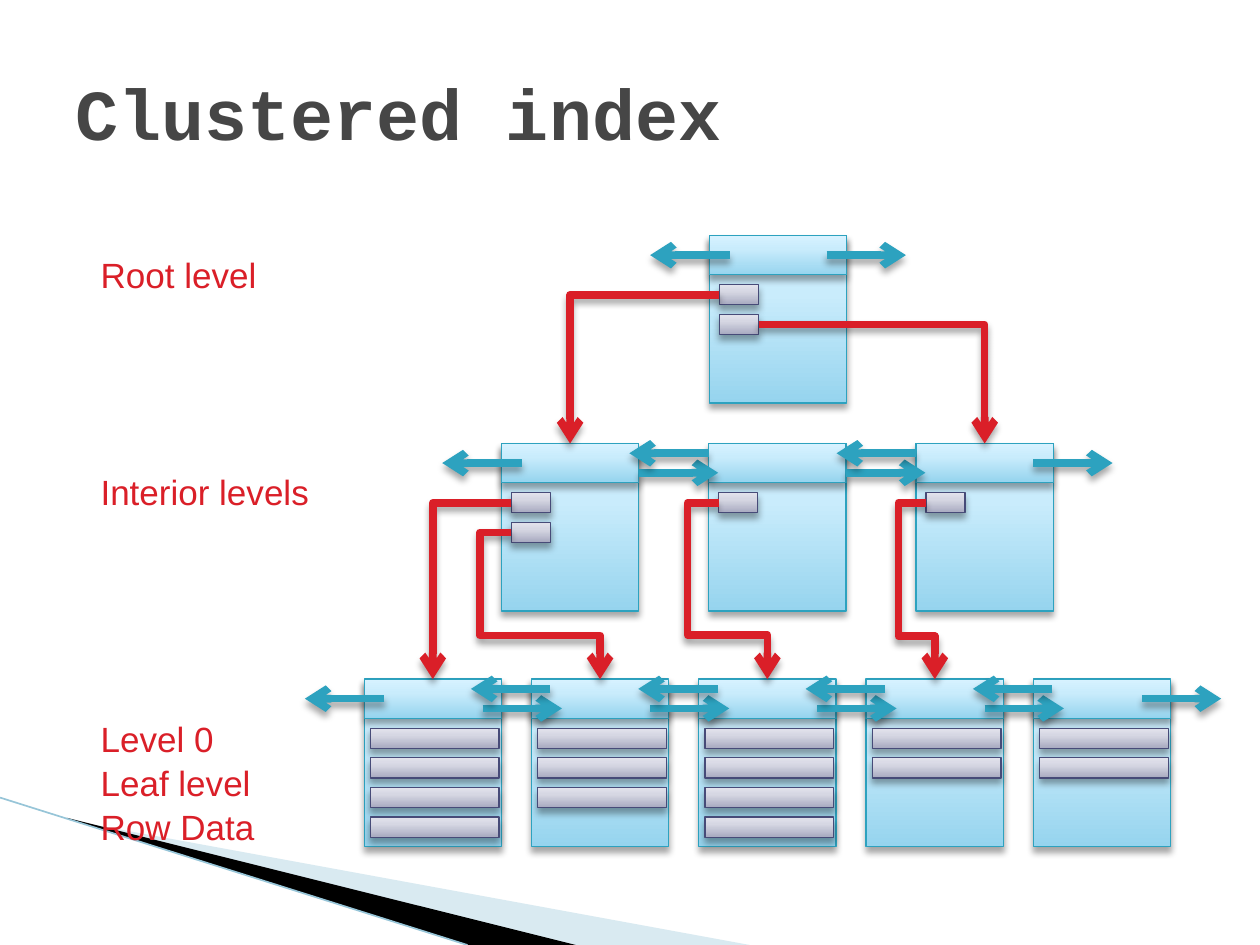
from copy import deepcopy

from lxml.etree import SubElement
from pptx import Presentation
from pptx.dml.color import RGBColor
from pptx.enum.shapes import MSO_CONNECTOR as CONN, MSO_SHAPE as SHAPE
from pptx.enum.text import MSO_ANCHOR, MSO_AUTO_SIZE, PP_ALIGN
from pptx.oxml.ns import qn
from pptx.util import Inches, Pt

RED = RGBColor(0xDA, 0x1F, 0x28)
TEAL = RGBColor(0x2D, 0xA2, 0xBF)
NAVY = RGBColor(0x47, 0x4B, 0x78)
GREY = RGBColor(0x46, 0x46, 0x46)
BLACK = RGBColor(0, 0, 0)
PALE = RGBColor(0xA0, 0xCB, 0xDC)
PALE_LINE = RGBColor(0x97, 0xC5, 0xD8)
PAGE_STOPS = [(0, RGBColor(0x96, 0xD4, 0xEE)), (0.65, RGBColor(0xC9, 0xEC, 0xFC)),
              (1, RGBColor(0xD7, 0xF2, 0xFF))]
SLOT_STOPS = [(0, RGBColor(0xA8, 0xAA, 0xC0)), (0.65, RGBColor(0xD6, 0xD7, 0xE3)),
              (1, RGBColor(0xE2, 0xE2, 0xEC))]

# Content: each level has one slot count per page
TITLE = "Clustered index"
LABELS = [(["Level 0", "Leaf level", "Row Data"], 5.63, 1.51, 1.11),
          (["Interior levels"], 3.67, 1.87, 0.44),
          (["Root level"], 1.95, 1.45, 0.44)]
LEVELS = {
    "leaf": dict(x=2.89, y=5.39, pitch=1.328, slots=[4, 3, 4, 2, 2],
                 slot_w=1.02, slot_dx=0.05, overlap=0.15, last_inset=0.23),
    "interior": dict(x=3.98, y=3.52, pitch=1.645, slots=[2, 1, 1],
                     slot_w=0.31, slot_dx=0.08, overlap=0, last_inset=0.16),
    "root": dict(x=5.63, y=1.87, pitch=0, slots=[2],
                 slot_w=0.31, slot_dx=0.08, overlap=0, last_inset=0.16),
}
# Pointers: (level, page, slot), side of the slot, (level, page), bend adjustments
LEFT, RIGHT, TOP = 1, 3, 0
POINTERS = [
    (("interior", 0, 0), LEFT, ("leaf", 0), None),
    (("interior", 0, 1), LEFT, ("leaf", 1), (-0.356, 0.702)),
    (("interior", 1, 0), LEFT, ("leaf", 2), (-0.64, 0.75)),
    (("interior", 2, 0), LEFT, ("leaf", 3), (-3.2, 0.757)),
    (("root", 0, 0), LEFT, ("interior", 0), None),
    (("root", 0, 1), RIGHT, ("interior", 2), None),
]
SWOOSHES = [
    ([(0.55, 6.51), (5.95, 7.5), (4.56, 7.5), (0.55, 6.5)], PALE, 40),
    ([(0.53, 6.49), (4.57, 7.5), (3.72, 7.5), (0.54, 6.5)], BLACK, 100),
]
PAGE_W, PAGE_H, HEAD_H = 1.09, 1.33, 0.31
SLOT_H, SLOT_DY, SLOT_PITCH = 0.16, 0.39, 0.235
ARROW_LEN, ARROW_INSET = 0.63, 0.16
ARROW_PT = 4.33

prs = Presentation()
prs.slide_width, prs.slide_height = Inches(10), Inches(7.5)
slide = prs.slides.add_slide(prs.slide_layouts[5])
shapes = slide.shapes


def set_text(s, lines, size, color, font="Arial", bold=False, spacing=None,
             anchor=MSO_ANCHOR.TOP, wrap=True, fit=MSO_AUTO_SIZE.NONE):
    tf = s.text_frame
    tf.word_wrap, tf.auto_size, tf.vertical_anchor = wrap, fit, anchor
    for i, line in enumerate(lines):
        p = tf.add_paragraph() if i else tf.paragraphs[0]
        p.alignment, p.line_spacing = PP_ALIGN.LEFT, spacing
        r = p.add_run()
        r.text = line
        r.font.name, r.font.size, r.font.bold = font, Pt(size), bold
        r.font.color.rgb = color


def add_shadow(s):
    effects = SubElement(s._element.spPr, qn("a:effectLst"))
    shadow = SubElement(effects, qn("a:outerShdw"), blurRad=str(Pt(4)), dist=str(Pt(3)),
                        dir="5400000", algn="ctr", rotWithShape="0")
    black = SubElement(shadow, qn("a:srgbClr"), val="000000")
    SubElement(black, qn("a:alpha"), val="35000")


def add_box(x, y, w, h, stops, line):
    s = shapes.add_shape(SHAPE.RECTANGLE, *map(Inches, (x, y, w, h)))
    s.fill.gradient()
    s.fill.gradient_angle = 90
    gs_list = s._element.spPr.find(".//" + qn("a:gsLst"))
    gs_list.append(deepcopy(gs_list[0]))
    for stop, (position, color) in zip(s.fill.gradient_stops, stops):
        stop.position, stop.color.rgb = position, color
    s.line.color.rgb, s.line.width = line, Pt(0.75)
    add_shadow(s)
    return s


def style_arrow(c, color):
    c.line.color.rgb, c.line.width = color, Pt(ARROW_PT)
    SubElement(c.line._get_or_add_ln(), qn("a:tailEnd"), type="arrow")
    add_shadow(c)


def add_arrow(x, y, length):
    c = shapes.add_connector(CONN.STRAIGHT, *map(Inches, (x, y, x + length, y)))
    style_arrow(c, TEAL)


def add_pointer(slot, side, head, bends):
    c = shapes.add_connector(CONN.ELBOW, 0, 0, 0, 0)
    c.begin_connect(slot, side)
    c.end_connect(head, TOP)
    geom = c._element.spPr.find(qn("a:prstGeom"))
    geom.set("prst", "bentConnector4" if bends else "bentConnector2")
    for i, bend in enumerate(bends or (), 1):
        SubElement(geom.find(qn("a:avLst")), qn("a:gd"), name=f"adj{i}",
                   fmla=f"val {round(bend * 100000)}")
    style_arrow(c, RED)


# Corner decoration
for points, color, alpha in SWOOSHES:
    corners = [(Inches(x), Inches(y)) for x, y in points]
    builder = shapes.build_freeform(*corners[0])
    builder.add_line_segments(corners[1:])
    s = builder.convert_to_shape()
    s.shadow.inherit = False
    s.fill.solid()
    s.fill.fore_color.rgb = color
    s.line.fill.background()
    if alpha < 100:
        rgb = s._element.spPr.find(qn("a:solidFill"))[0]
        SubElement(rgb, qn("a:alpha"), val=str(alpha * 1000))
edge = shapes.add_connector(CONN.STRAIGHT, *map(Inches, (0, 6.33, 3.71, 7.5)))
edge.line.color.rgb, edge.line.width = PALE_LINE, Pt(0.95)
SubElement(edge._element.spPr, qn("a:effectLst"))

# Title and level labels
title = shapes.title
title.left, title.top, title.width, title.height = map(Inches, (0.5, 0.39, 9, 1))
set_text(title, [TITLE], 41, GREY, font="Courier New", bold=True, anchor=MSO_ANCHOR.MIDDLE)
for lines, y, w, h in LABELS:
    label = shapes.add_textbox(*map(Inches, (0.7, y, w, h)))
    set_text(label, lines, 20, RED, spacing=1.05, wrap=False, fit=MSO_AUTO_SIZE.SHAPE_TO_FIT_TEXT)

# Pages with their headers
heads, slots = {}, {}
for name, lv in LEVELS.items():
    lv["xs"] = [lv["x"] + i * lv["pitch"] for i in range(len(lv["slots"]))]
    for i, x in enumerate(lv["xs"]):
        add_box(x, lv["y"], PAGE_W, PAGE_H, PAGE_STOPS, TEAL)
        heads[name, i] = add_box(x, lv["y"], PAGE_W, HEAD_H, PAGE_STOPS, TEAL)

# Arrows to neighbouring pages
for lv in LEVELS.values():
    xs, y, overlap = lv["xs"], lv["y"], lv["overlap"]
    add_arrow(xs[0] + ARROW_INSET, y + HEAD_H / 2, -ARROW_LEN)
    add_arrow(xs[-1] + PAGE_W - lv["last_inset"], y + HEAD_H / 2, ARROW_LEN)
    for x, next_x in zip(xs, xs[1:]):
        add_arrow(x + PAGE_W - overlap, y + HEAD_H * 0.75, ARROW_LEN)
        add_arrow(next_x + overlap, y + HEAD_H * 0.25, -ARROW_LEN)

# Slots in the pages
for name, lv in LEVELS.items():
    for i, (x, count) in enumerate(zip(lv["xs"], lv["slots"])):
        for j in range(count):
            slots[name, i, j] = add_box(x + lv["slot_dx"], lv["y"] + SLOT_DY + j * SLOT_PITCH,
                                        lv["slot_w"], SLOT_H, SLOT_STOPS, NAVY)

# Pointers down the tree
for source, side, target, bends in POINTERS:
    add_pointer(slots[source], side, heads[target], bends)

prs.save("out.pptx")
